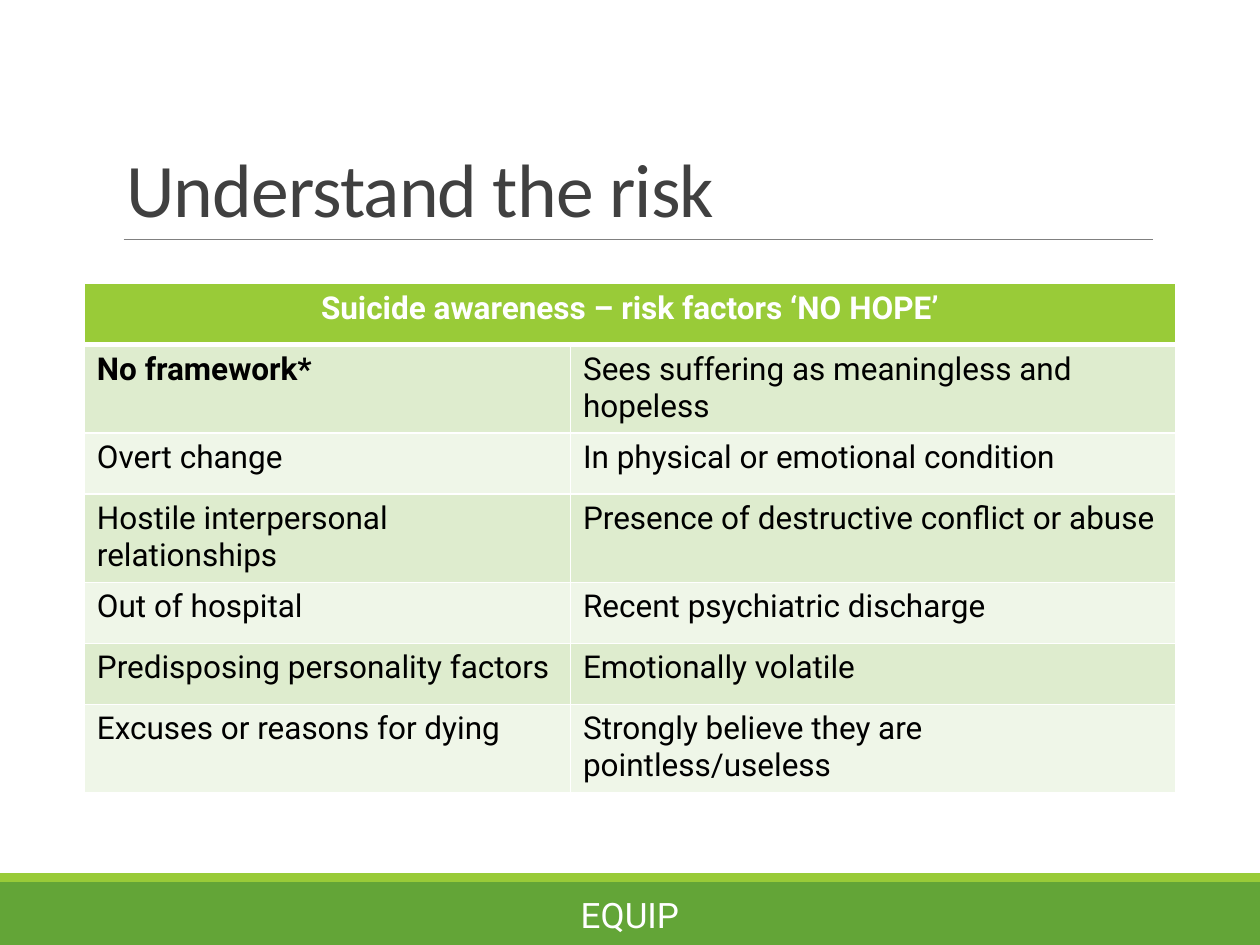
"""Build the "Understand the risk" slide with its table of suicide risk factors."""
from dataclasses import dataclass

from lxml.etree import SubElement
from pptx import Presentation
from pptx.dml.color import RGBColor
from pptx.enum.shapes import MSO_CONNECTOR as Connector, MSO_SHAPE as Shape
from pptx.enum.text import MSO_ANCHOR as Anchor, MSO_AUTO_SIZE as AutoSize, PP_ALIGN as Align
from pptx.oxml.ns import qn
from pptx.slide import Slide
from pptx.util import Cm, Pt

HEADING = "Suicide awareness – risk factors ‘NO HOPE’"
RISK_FACTORS = [
    ("No framework*", "Sees suffering as meaningless and hopeless"),
    ("Overt change", "In physical or emotional condition"),
    ("Hostile interpersonal relationships", "Presence of destructive conflict or abuse"),
    ("Out of hospital", "Recent psychiatric discharge"),
    ("Predisposing personality factors", "Emotionally volatile"),
    ("Excuses or reasons for dying", "Strongly believe they are pointless/useless"),
]


def color(value):
    return RGBColor.from_string(value)


@dataclass
class SlideBuilder:
    slide: Slide
    title_font: str = "Calibri"
    body_font: str = "Roboto"
    lime: str = "99CB38"
    green: str = "63A537"
    bands: tuple = ("DEECCE", "EFF6E8")
    white: str = "FFFFFF"
    black: str = "000000"
    title_gray: str = "404040"
    rule_gray: str = "808080"

    def set_text(self, frame, text, size, ink, font=None, align=Align.LEFT, bold=False):
        frame.text = text
        paragraph = frame.paragraphs[0]
        paragraph.alignment = align
        run = paragraph.runs[0]
        run.font.name = font or self.body_font
        run.font.size = Pt(size)
        run.font.bold = bold
        run.font.color.rgb = color(ink)
        return paragraph

    def title(self, text, left, top, width, height):
        shape = self.slide.shapes.title
        shape.left, shape.top, shape.width, shape.height = map(Cm, (left, top, width, height))
        frame = shape.text_frame
        frame.auto_size = AutoSize.NONE
        frame.vertical_anchor = Anchor.BOTTOM
        paragraph = self.set_text(frame, text, 43.2, self.title_gray, self.title_font)
        paragraph.line_spacing = 0.85
        paragraph.runs[0]._r.get_or_add_rPr().set("spc", "-50")

    def bar(self, fill, left, top, width, height):
        shape = self.slide.shapes.add_shape(Shape.RECTANGLE, *map(Cm, (left, top, width, height)))
        shape.shadow.inherit = False
        shape.fill.solid()
        shape.fill.fore_color.rgb = color(fill)
        shape.line.fill.background()

    def rule(self, left, top, right):
        line = self.slide.shapes.add_connector(
            Connector.STRAIGHT, Cm(left), Cm(top), Cm(right), Cm(top))
        line.line.color.rgb = color(self.rule_gray)
        line.line.width = Pt(0.5)
        SubElement(line._element.spPr, qn("a:effectLst"))

    def label(self, text, left, top, width, height):
        frame = self.slide.shapes.add_textbox(*map(Cm, (left, top, width, height))).text_frame
        frame.word_wrap = True
        frame.vertical_anchor = Anchor.MIDDLE
        self.set_text(frame, text, 20, self.white, align=Align.CENTER)

    def cell_style(self, cell, fill, bottom=1):
        properties = cell._tc.get_or_add_tcPr()
        for side, width in (("L", 1), ("R", 1), ("T", 1), ("B", bottom)):
            border = SubElement(properties, qn(f"a:ln{side}"), w=str(Pt(width)))
            paint = SubElement(border, qn("a:solidFill"))
            SubElement(paint, qn("a:srgbClr"), val=self.white)
        cell.fill.solid()
        cell.fill.fore_color.rgb = color(fill)

    def table(self, heading, rows, left, top, column_widths, row_height):
        row_count = len(rows) + 1
        table = self.slide.shapes.add_table(
            row_count, len(column_widths), Cm(left), Cm(top),
            Cm(sum(column_widths)), Cm(row_height * row_count)).table
        for column, width in zip(table.columns, column_widths):
            column.width = Cm(width)
        for row in table.rows:
            row.height = Cm(row_height)
        header = table.cell(0, 0)
        header.merge(table.cell(0, len(column_widths) - 1))
        for cell in table.rows[0].cells:
            self.cell_style(cell, self.lime, bottom=3)
        self.set_text(header.text_frame, heading, 18, self.white, align=Align.CENTER, bold=True)
        for row_index, texts in enumerate(rows):
            for column_index, text in enumerate(texts):
                cell = table.cell(row_index + 1, column_index)
                self.cell_style(cell, self.bands[row_index % 2])
                is_first = row_index == column_index == 0
                self.set_text(cell.text_frame, text, 18, self.black, bold=is_first)


def main():
    presentation = Presentation()
    presentation.slide_width, presentation.slide_height = Cm(25.4), Cm(19.05)
    builder = SlideBuilder(presentation.slides.add_slide(presentation.slide_layouts[5]))
    builder.bar(builder.green, 0, 17.78, 25.4, 1.27)
    builder.bar(builder.lime, 0, 17.6, 25.4, 0.18)
    builder.rule(2.49, 4.83, 23.24)
    builder.title("Understand the risk", 2.29, 0.79, 20.96, 4.04)
    builder.label("EQUIP", 7.67, 17.93, 10.06, 1.02)
    builder.table(HEADING, RISK_FACTORS, 1.7, 5.72, (9.8, 12.2), 1.23)
    presentation.save("out.pptx")


if __name__ == "__main__":
    main()
